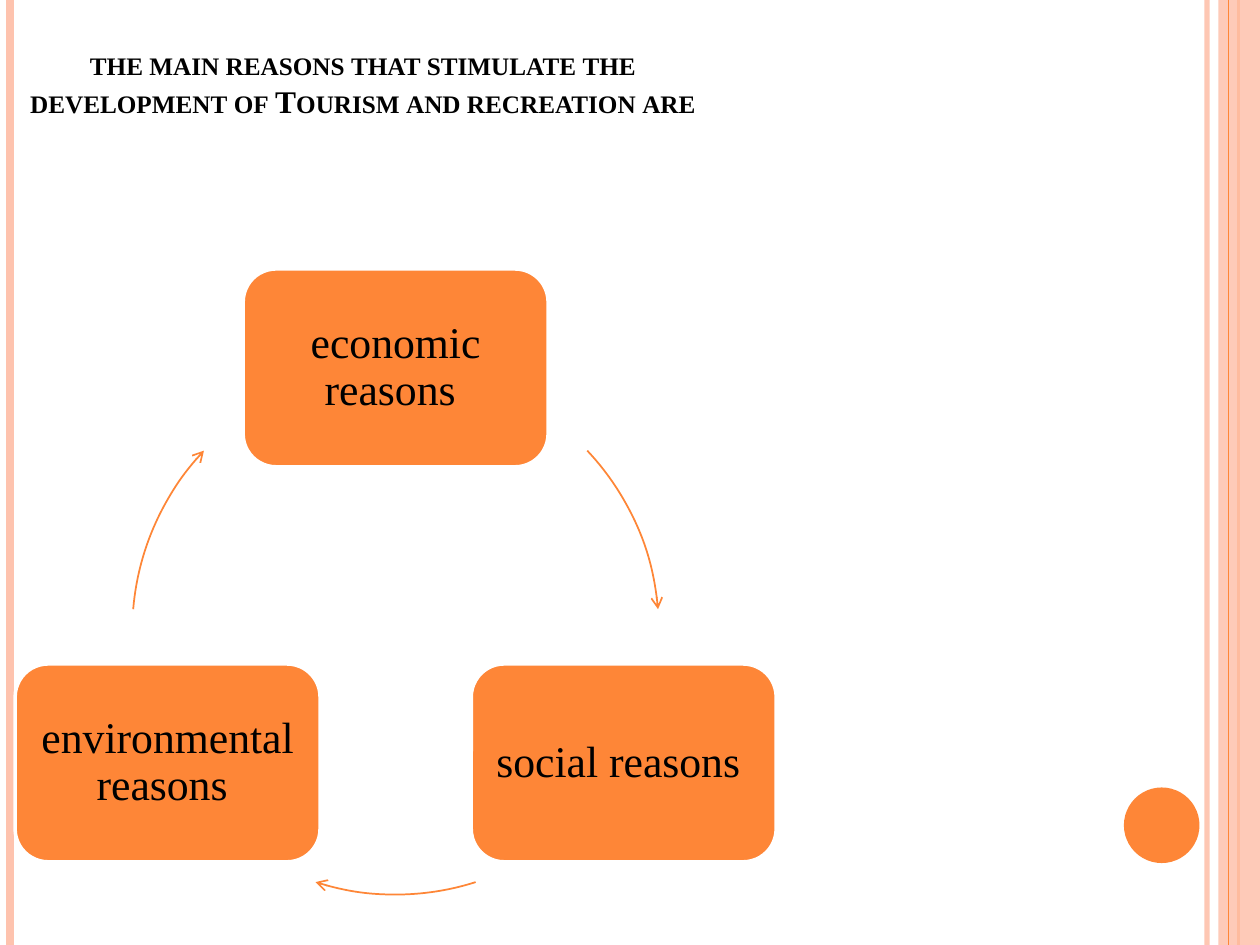
import math
from dataclasses import dataclass

from lxml import etree
from pptx import Presentation
from pptx import util as u
from pptx.dml.color import RGBColor
from pptx.enum import shapes, text
from pptx.oxml.ns import qn


@dataclass(frozen=True)
class Theme:
    accent: str = "FE8637"
    pale: str = "FEC3AE"
    paper: str = "FFFFFF"
    ink: str = "000000"
    font: str = "Times New Roman"
    title_size: int = 18
    box_size: int = 25


THEME = Theme()
WIDTH, HEIGHT = 10, 7.5
CENTER_X, CENTER_Y, RADIUS = 3.14, 5.01, 2.09
BOX_WIDTH, BOX_HEIGHT = 2.42, 1.57
REASONS = ["economic reasons ", "social reasons ", "environmental reasons "]
# Start and end of each arrow, in degrees clockwise from the right
ARROWS = [(316.7, 355.2), (72.3, 107.7), (184.8, 223.3)]


def inches(*lengths):
    return [u.Inches(length) for length in lengths]


def set_alpha(color_format_parent, percent):
    """Make the first RGB colour below an XML element partly transparent."""
    color = color_format_parent.find(".//" + qn("a:srgbClr"))
    etree.SubElement(color, qn("a:alpha")).set("val", str(percent * 1000))


def style_line(shape, color, width):
    shape.line.color.rgb = RGBColor.from_string(color)
    shape.line.width = u.Pt(width)


def write(shape, content, size, bold=False, small_caps=False, spacing=1.0,
          anchor=text.MSO_ANCHOR.MIDDLE):
    frame = shape.text_frame
    frame.word_wrap = True
    frame.auto_size = text.MSO_AUTO_SIZE.NONE
    frame.vertical_anchor = anchor
    paragraph = frame.paragraphs[0]
    paragraph.alignment = text.PP_ALIGN.CENTER
    paragraph.line_spacing = spacing
    run = paragraph.add_run()
    run.text = content
    run.font.name = THEME.font
    run.font.size = u.Pt(size)
    run.font.bold = bold
    run.font.color.rgb = RGBColor.from_string(THEME.ink)
    if small_caps:
        run._r.get_or_add_rPr().set("cap", "small")


def add_filled(slide, kind, box, color):
    shape = slide.shapes.add_shape(kind, *inches(*box))
    shape.shadow.inherit = False
    shape.fill.solid()
    shape.fill.fore_color.rgb = RGBColor.from_string(color)
    shape.line.fill.background()
    return shape


def add_stripe(slide, x, color, width, alpha=100):
    """Draw a vertical line over the full height of the slide."""
    stripe = slide.shapes.add_connector(
        shapes.MSO_CONNECTOR.STRAIGHT, *inches(x, 0, x, HEIGHT))
    style_line(stripe, color, width)
    properties = stripe._element.spPr
    etree.SubElement(properties, qn("a:effectLst"))
    if alpha < 100:
        set_alpha(properties, alpha)


def add_decoration(slide):
    add_stripe(slide, 9.58, THEME.pale, 3, alpha=93)
    add_stripe(slide, 0.08, THEME.pale, 4.5)
    add_stripe(slide, 9.83, THEME.accent, 1.5)
    band = add_filled(slide, shapes.MSO_SHAPE.RECTANGLE,
                      (9.67, 0, WIDTH - 9.67, HEIGHT), THEME.pale)
    set_alpha(band._element.spPr, 87)
    add_stripe(slide, 9.75, THEME.accent, 0.75)
    add_filled(slide, shapes.MSO_SHAPE.OVAL, (8.92, 6.25, 0.6, 0.6), THEME.accent)


def add_title(slide, content):
    title = slide.shapes.title
    title.left, title.top, title.width, title.height = inches(0.12, 0.13, 5.52, 0.87)
    write(title, content, THEME.title_size, bold=True, small_caps=True,
          anchor=text.MSO_ANCHOR.BOTTOM)


def add_reason(slide, content, degrees):
    """Place a rounded box with its centre on the cycle's circle."""
    angle = math.radians(degrees)
    left = CENTER_X + RADIUS * math.cos(angle) - BOX_WIDTH / 2
    top = CENTER_Y + RADIUS * math.sin(angle) - BOX_HEIGHT / 2
    box = add_filled(slide, shapes.MSO_SHAPE.ROUNDED_RECTANGLE,
                     (left, top, BOX_WIDTH, BOX_HEIGHT), THEME.accent)
    style_line(box, THEME.paper, 2)
    frame = box.text_frame
    frame.margin_left = frame.margin_right = u.Inches(0.1)
    frame.margin_top = frame.margin_bottom = u.Inches(0.1)
    write(box, content, THEME.box_size, spacing=0.9)


def add_arc_arrow(slide, start, end):
    arc = slide.shapes.add_shape(
        shapes.MSO_SHAPE.ARC,
        *inches(CENTER_X - RADIUS, CENTER_Y - RADIUS, 2 * RADIUS, 2 * RADIUS))
    arc.shadow.inherit = False
    arc.fill.background()
    style_line(arc, THEME.accent, 1)
    for index, degrees in enumerate((start, end)):
        signed = degrees if degrees <= 180 else degrees - 360
        # Angles are stored in 60000ths of a degree, adjustments in 100000ths
        arc.adjustments[index] = (signed % 360) * 0.6
    etree.SubElement(arc.line._get_or_add_ln(), qn("a:tailEnd")).set("type", "arrow")


def add_cycle(slide):
    step = 360 / len(REASONS)
    for index, (reason, (start, end)) in enumerate(zip(REASONS, ARROWS)):
        add_reason(slide, reason, -90 + index * step)
        add_arc_arrow(slide, start, end)


def main():
    presentation = Presentation()
    presentation.slide_width, presentation.slide_height = inches(WIDTH, HEIGHT)
    slide = presentation.slides.add_slide(presentation.slide_layouts[5])
    add_decoration(slide)
    add_title(slide, "the main reasons that stimulate the development of "
                     "Tourism and recreation are")
    add_cycle(slide)
    presentation.save("out.pptx")


if __name__ == "__main__":
    main()
